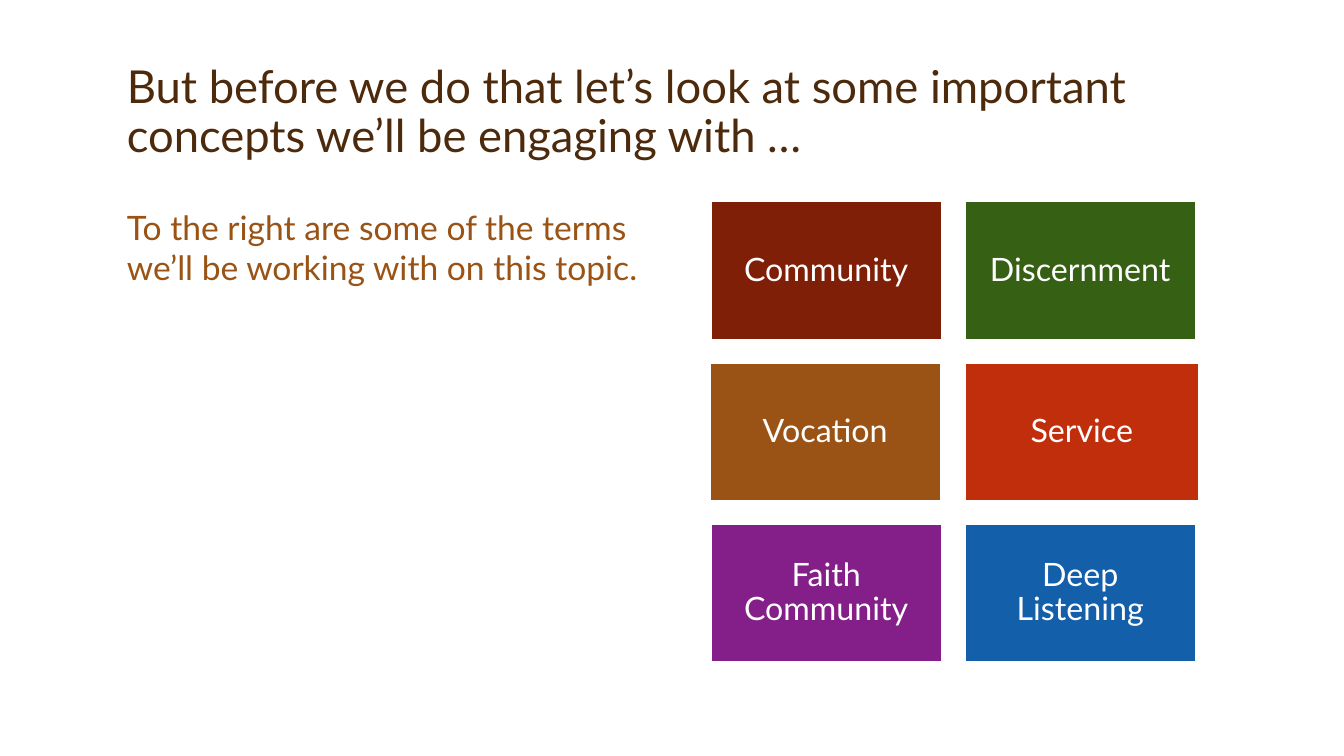
"""Build a slide that introduces six key terms in a grid of coloured tiles."""
import dataclasses

import pptx
import pptx.dml.color
import pptx.enum.shapes
import pptx.enum.text
import pptx.slide
import pptx.text.text
import pptx.util

RGBColor = pptx.dml.color.RGBColor
Anchor = pptx.enum.text.MSO_ANCHOR

EMU_PER_PX = 9144
FONT = "Lato"

WHITE = RGBColor(0xFF, 0xFF, 0xFF)
DARK_BROWN = RGBColor(0x4D, 0x2A, 0x0B)
BROWN = RGBColor(0x9A, 0x53, 0x15)
MAROON = RGBColor(0x80, 0x1F, 0x08)
GREEN = RGBColor(0x36, 0x60, 0x13)
RED = RGBColor(0xC0, 0x2E, 0x0C)
PURPLE = RGBColor(0x84, 0x1E, 0x89)
BLUE = RGBColor(0x14, 0x5F, 0xAA)

COLUMNS = 2
GRID_LEFT, GRID_TOP = 705, 200
COLUMN_STEP, ROW_STEP = 252, 160
TILE_WIDTH, TILE_HEIGHT = 229, 137
TILE_INSET = 10


@dataclasses.dataclass(frozen=True)
class TextBlock:
    text: str
    left: int
    top: int
    width: int
    height: int
    size: float
    color: RGBColor
    anchor: Anchor = Anchor.TOP
    line_spacing: float = 1.0


@dataclasses.dataclass(frozen=True)
class Tile:
    term: str
    fill: RGBColor
    shift: int = 0
    extra_width: int = 0


TEXT_BLOCKS = (
    TextBlock("But before we do that let’s look at some important concepts we’ll be engaging with …",
              116, 33, 1100, 133, 32.4, DARK_BROWN, Anchor.BOTTOM, 0.9),
    TextBlock("To the right are some of the terms we’ll be working with on this topic.",
              116, 200, 542, 458, 24, BROWN),
)

TILES = (
    Tile("Community", MAROON),
    Tile("Discernment", GREEN),
    Tile("Vocation", BROWN, shift=-1),
    Tile("Service", RED, extra_width=3),
    Tile("Faith Community", PURPLE),
    Tile("Deep Listening", BLUE),
)


def px(length: int) -> pptx.util.Emu:
    """Turn a length in px into EMU."""
    return pptx.util.Emu(length * EMU_PER_PX)


def write_text(frame: pptx.text.text.TextFrame, text: str, size: float, color: RGBColor,
               anchor: Anchor, line_spacing: float) -> pptx.text.text._Paragraph:
    """Fill a text frame with one styled paragraph and return it."""
    frame.word_wrap = True
    frame.vertical_anchor = anchor
    paragraph = frame.paragraphs[0]
    paragraph.text = text
    paragraph.line_spacing = line_spacing
    paragraph.font.name = FONT
    paragraph.font.size = pptx.util.Pt(size)
    paragraph.font.color.rgb = color
    return paragraph


def draw_text_block(slide: pptx.slide.Slide, block: TextBlock) -> None:
    """Add a text box to the slide."""
    box = slide.shapes.add_textbox(px(block.left), px(block.top), px(block.width), px(block.height))
    write_text(box.text_frame, block.text, block.size, block.color, block.anchor, block.line_spacing)


def draw_tile(slide: pptx.slide.Slide, tile: Tile, index: int) -> None:
    """Add a tile at its place in the grid."""
    row, column = divmod(index, COLUMNS)
    shape = slide.shapes.add_shape(
        pptx.enum.shapes.MSO_SHAPE.RECTANGLE,
        px(GRID_LEFT + column * COLUMN_STEP + tile.shift),
        px(GRID_TOP + row * ROW_STEP),
        px(TILE_WIDTH + tile.extra_width),
        px(TILE_HEIGHT),
    )
    shape.shadow.inherit = False
    shape.fill.solid()
    shape.fill.fore_color.rgb = tile.fill
    shape.line.color.rgb = WHITE
    shape.line.width = pptx.util.Pt(1)
    frame = shape.text_frame
    frame.margin_left = frame.margin_right = px(TILE_INSET)
    frame.margin_top = frame.margin_bottom = px(TILE_INSET)
    paragraph = write_text(frame, tile.term, 23, WHITE, Anchor.MIDDLE, 0.9)
    paragraph.alignment = pptx.enum.text.PP_ALIGN.CENTER


def main() -> None:
    """Build and save the presentation."""
    presentation = pptx.Presentation()
    presentation.slide_width = px(1333)
    presentation.slide_height = px(750)
    slide = presentation.slides.add_slide(presentation.slide_layouts[6])
    for block in TEXT_BLOCKS:
        draw_text_block(slide, block)
    for index, tile in enumerate(TILES):
        draw_tile(slide, tile, index)
    presentation.save("out.pptx")


if __name__ == "__main__":
    main()
